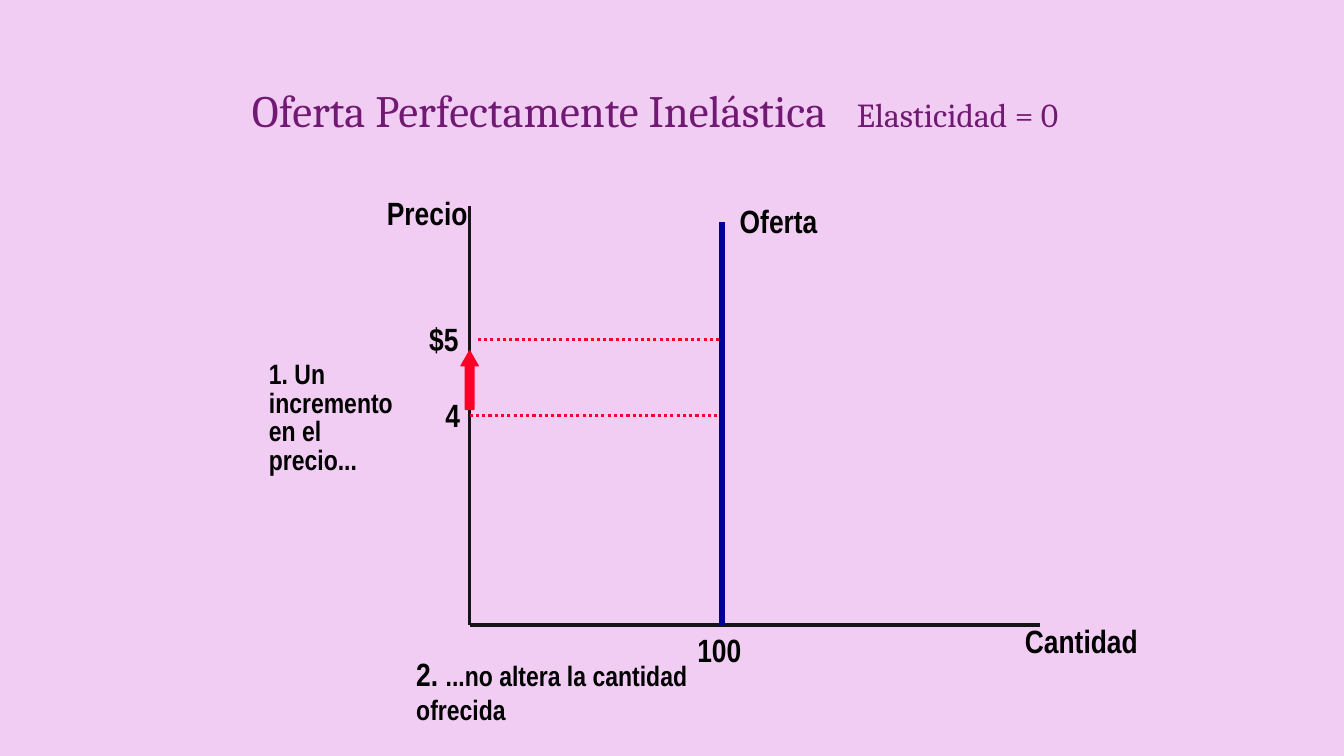
from dataclasses import dataclass
from typing import Optional

from pptx import Presentation
from pptx.dml.color import RGBColor
from pptx.enum.dml import MSO_LINE
from pptx.enum.shapes import MSO_CONNECTOR, MSO_SHAPE
from pptx.enum.text import MSO_ANCHOR, MSO_AUTO_SIZE, PP_ALIGN
from pptx.oxml.ns import qn
from pptx.slide import Slide
from pptx.util import Pt

COLORS = {
    "background": "F2CDF3",
    "title": "711A73",
    "axis": "151517",
    "supply": "000099",
    "price": "FC0128",
    "text": "000000",
}
TITLE_FONT = "Cambria"
LABEL_FONT = "Arial Narrow"
LABEL_SIZE = 23
NOTE_SIZE = 20

AXIS_X, AXIS_Y = 335.5, 446.4
SUPPLY_X = 515.5
HIGH_PRICE_Y, LOW_PRICE_Y = 242.6, 296.6


@dataclass(frozen=True)
class Span:
    text: str
    size: float


@dataclass(frozen=True)
class Label:
    spans: tuple[Span, ...]
    left: float
    top: float
    width: float
    height: float = 34.6
    wrap: bool = False
    spacing: Optional[float] = None


@dataclass(frozen=True)
class Line:
    start: tuple[float, float]
    end: tuple[float, float]
    color: str
    width: float = 2.25
    dash: Optional[MSO_LINE] = None


def name_label(text: str, left: float, top: float, width: float) -> Label:
    return Label((Span(text, LABEL_SIZE),), left, top, width)


LINES = (
    Line((AXIS_X, 147), (AXIS_X, AXIS_Y), "axis"),
    Line((AXIS_X, AXIS_Y), (743, AXIS_Y), "axis"),
    Line((AXIS_X, LOW_PRICE_Y), (SUPPLY_X, LOW_PRICE_Y), "price", dash=MSO_LINE.ROUND_DOT),
    Line((341.3, HIGH_PRICE_Y), (SUPPLY_X, HIGH_PRICE_Y), "price", dash=MSO_LINE.ROUND_DOT),
    Line((SUPPLY_X, AXIS_Y), (SUPPLY_X, 158.4), "supply", 4.5),
)

LABELS = (
    name_label("Cantidad", 725, 440.6, 95),
    name_label("Precio", 269.3, 134.6, 72),
    name_label("4", 311, LOW_PRICE_Y - 18, 25.2),
    name_label("$5", 299.5, HIGH_PRICE_Y - 18, 35.3),
    name_label("Oferta", 521.3, 140.4, 69.8),
    name_label("100", 491, AXIS_Y, 46),
    Label(
        (Span("2. ", LABEL_SIZE), Span("...no altera la cantidad ofrecida", NOTE_SIZE)),
        290.2, 463.7, 250, 58, wrap=True,
    ),
    Label(
        (Span("1. Un incremento en el precio...", NOTE_SIZE),),
        185, 255, 108, 86, wrap=True, spacing=0.85,
    ),
)


def rgb(name: str) -> RGBColor:
    return RGBColor.from_string(COLORS[name])


def write_spans(para, spans: tuple[Span, ...], font: str, color: str, bold: bool) -> None:
    para.text = spans[0].text
    for extra in spans[1:]:
        para.add_run().text = extra.text
    for run, span in zip(para.runs, spans):
        run.font.name = font
        run.font.size = Pt(span.size)
        run.font.bold = bold
        run.font.color.rgb = rgb(color)


def draw_title(page: Slide) -> None:
    title = page.shapes.title
    title.left, title.top = Pt(172.8), Pt(36)
    title.width, title.height = Pt(697.7), Pt(90)
    frame = title.text_frame
    frame.word_wrap = True
    frame.auto_size = MSO_AUTO_SIZE.NONE
    frame.vertical_anchor = MSO_ANCHOR.MIDDLE
    para = frame.paragraphs[0]
    spans = (Span("Oferta Perfectamente Inelástica\t", 32), Span("Elasticidad = 0", 24))
    write_spans(para, spans, TITLE_FONT, "title", False)
    para.alignment = PP_ALIGN.LEFT
    para.line_spacing = 0.9


def draw_line(page: Slide, line: Line) -> None:
    connector = page.shapes.add_connector(
        MSO_CONNECTOR.STRAIGHT, *(Pt(value) for value in line.start + line.end)
    )
    connector.line.color.rgb = rgb(line.color)
    connector.line.width = Pt(line.width)
    if line.dash is not None:
        connector.line.dash_style = line.dash
    properties = connector.element.spPr
    properties.append(properties.makeelement(qn("a:effectLst"), {}))


def draw_label(page: Slide, label: Label) -> None:
    box = page.shapes.add_textbox(
        Pt(label.left), Pt(label.top), Pt(label.width), Pt(label.height)
    )
    frame = box.text_frame
    frame.word_wrap = label.wrap
    frame.auto_size = MSO_AUTO_SIZE.SHAPE_TO_FIT_TEXT
    para = frame.paragraphs[0]
    write_spans(para, label.spans, LABEL_FONT, "text", True)
    if label.spacing is not None:
        para.line_spacing = label.spacing


def draw_price_arrow(page: Slide) -> None:
    width = 12.2
    arrow = page.shapes.add_shape(
        MSO_SHAPE.UP_ARROW, Pt(AXIS_X - width / 2), Pt(250.6), Pt(width), Pt(41.8)
    )
    arrow.adjustments[0] = 0.5
    arrow.adjustments[1] = 0.875
    arrow.shadow.inherit = False
    arrow.fill.solid()
    arrow.fill.fore_color.rgb = rgb("price")
    arrow.line.color.rgb = rgb("price")
    arrow.line.width = Pt(1)


def main() -> None:
    deck = Presentation()
    deck.slide_width, deck.slide_height = Pt(960), Pt(540)
    page = deck.slides.add_slide(deck.slide_layouts.get_by_name("Title Only"))
    page.background.fill.solid()
    page.background.fill.fore_color.rgb = rgb("background")
    draw_title(page)
    for line in LINES:
        draw_line(page, line)
    for label in LABELS:
        draw_label(page, label)
    draw_price_arrow(page)
    deck.save("out.pptx")


if __name__ == "__main__":
    main()
